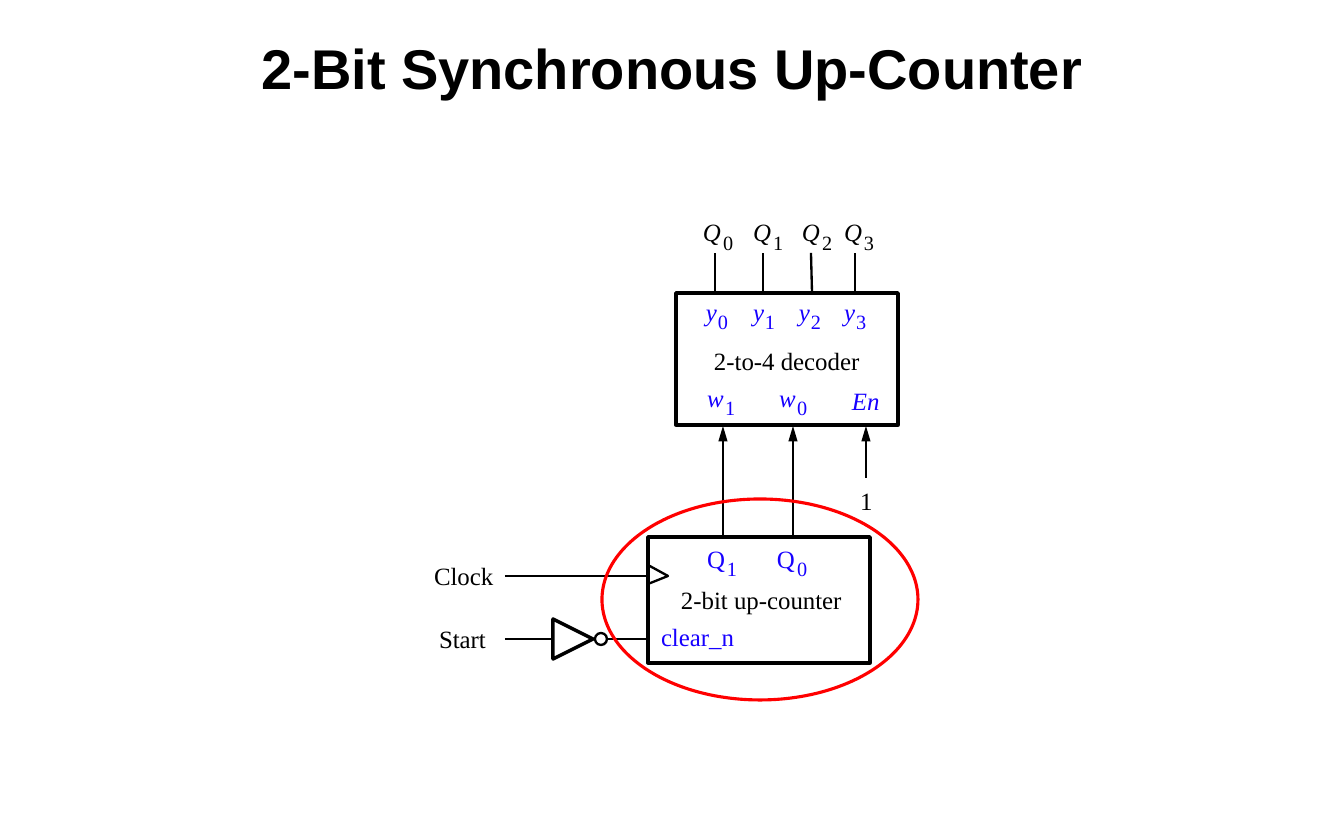
from pptx import Presentation
from pptx import util as u
from pptx.dml.color import RGBColor
from pptx.enum import shapes, text
from pptx.oxml.ns import qn
from lxml import etree

PX = 914400 / 112
BLACK = RGBColor(0x00, 0x00, 0x00)
WHITE = RGBColor(0xFF, 0xFF, 0xFF)
BLUE = RGBColor(0x17, 0x00, 0xFF)
RED = RGBColor(0xFF, 0x00, 0x00)


def px(*lengths):
    return [round(length * PX) for length in lengths]


def style(shape, fill, line, weight):
    shape.shadow.inherit = False
    if fill is None:
        shape.fill.background()
    else:
        shape.fill.solid()
        shape.fill.fore_color.rgb = fill
    shape.line.color.rgb = line
    shape.line.width = u.Pt(weight)


presentation = Presentation()
presentation.slide_width, presentation.slide_height = px(1344, 840)
slide = presentation.slides.add_slide(presentation.slide_layouts[5])

title = slide.shapes.title
title.left, title.top, title.width, title.height = px(112, 28, 1120, 75)
title.text_frame.vertical_anchor = text.MSO_ANCHOR.TOP
title.text_frame.auto_size = text.MSO_AUTO_SIZE.NONE
paragraph = title.text_frame.paragraphs[0]
paragraph.alignment = text.PP_ALIGN.CENTER
run = paragraph.add_run()
run.text = "2-Bit Synchronous Up-Counter"
run.font.name = "Arial"
run.font.size = u.Pt(36)
run.font.bold = True
run.font.color.rgb = BLACK

counter_box = (648, 537, 222, 126)
decoder_box = (676, 293, 222, 132)
for box in (counter_box, decoder_box):
    shape = slide.shapes.add_shape(shapes.MSO_SHAPE.RECTANGLE, *px(*box))
    style(shape, None, BLACK, 2.25)

clock_wire = (505, 576, 647, 576, False)
start_wire = (505, 639, 647, 639, False)
output_wires = [
    (bottom, 292, top, 253, False)
    for bottom, top in ((715, 715), (763, 763), (812, 811), (855, 855))
]
input_wires = [
    (x, y, x, 426, True) for x, y in ((793, 537), (723, 537), (866, 478))
]
for x1, y1, x2, y2, arrow in [clock_wire, start_wire, *output_wires, *input_wires]:
    wire = slide.shapes.add_connector(
        shapes.MSO_CONNECTOR.STRAIGHT, *px(x1, y1, x2, y2)
    )
    wire.line.color.rgb = BLACK
    wire.line.width = u.Pt(1.5)
    if arrow:
        etree.SubElement(
            wire.line._get_or_add_ln(), qn("a:tailEnd"), type="triangle", w="med", len="lg"
        )
    etree.SubElement(wire._element.spPr, qn("a:effectLst"))

clock_mark = ([(648, 584), (668, 576), (648, 565)], False, None, 1.5)
inverter = ([(593, 639), (553, 659), (553, 619)], True, WHITE, 2.25)
for points, closed, fill, weight in (clock_mark, inverter):
    builder = slide.shapes.build_freeform(*points[0], scale=PX)
    builder.add_line_segments(points[1:], close=closed)
    style(builder.convert_to_shape(), fill, BLACK, weight)

bubble = slide.shapes.add_shape(shapes.MSO_SHAPE.OVAL, *px(595, 633, 12, 12))
style(bubble, WHITE, BLACK, 1.5)

labels = [
    ("clear_n", 661, 622, 81, 16, BLUE, False),
    ("2-bit up-counter", 681, 585, 164, 16, BLACK, False),
    ("Start", 439, 624, 54, 16, BLACK, False),
    ("Clock", 434, 561, 66, 16, BLACK, False),
    ("2-to-4 decoder", 714, 346, 150, 16, BLACK, False),
    ("En", 852, 386, 32, 16, BLUE, True),
    ("1", 860, 486, 19, 16, BLACK, False),
]
subscripted = [
    ("Q", 217, 25, 20, 13, BLACK, True, (("0", 703), ("1", 753), ("2", 802), ("3", 844))),
    ("y", 297, 19, 12, 12, BLUE, True, (("0", 706), ("1", 753), ("2", 799), ("3", 844))),
    ("w", 383, 25, 18, 12, BLUE, True, (("1", 707), ("0", 779))),
    ("Q", 544, 25, 20, 12, BLUE, False, (("1", 707), ("0", 777))),
]
for letter, y, width, offset, drop, color, italic, places in subscripted:
    for digit, x in places:
        labels.append((letter, x, y, width, 16, color, italic))
        labels.append((digit, x + offset, y + drop, 16, 13, color, False))

for words, x, y, width, size, color, italic in labels:
    height = 30 if size == 16 else 25
    label = slide.shapes.add_textbox(*px(x, y, width, height))
    frame = label.text_frame
    frame.margin_left = frame.margin_right = frame.margin_top = frame.margin_bottom = 0
    frame.word_wrap = False
    frame.auto_size = text.MSO_AUTO_SIZE.SHAPE_TO_FIT_TEXT
    run = frame.paragraphs[0].add_run()
    run.text = words
    run.font.name = "Times New Roman"
    run.font.size = u.Pt(size)
    run.font.italic = italic
    run.font.color.rgb = color

highlight = slide.shapes.add_shape(shapes.MSO_SHAPE.OVAL, *px(602, 499, 316, 201))
style(highlight, None, RED, 2)

presentation.save("out.pptx")
